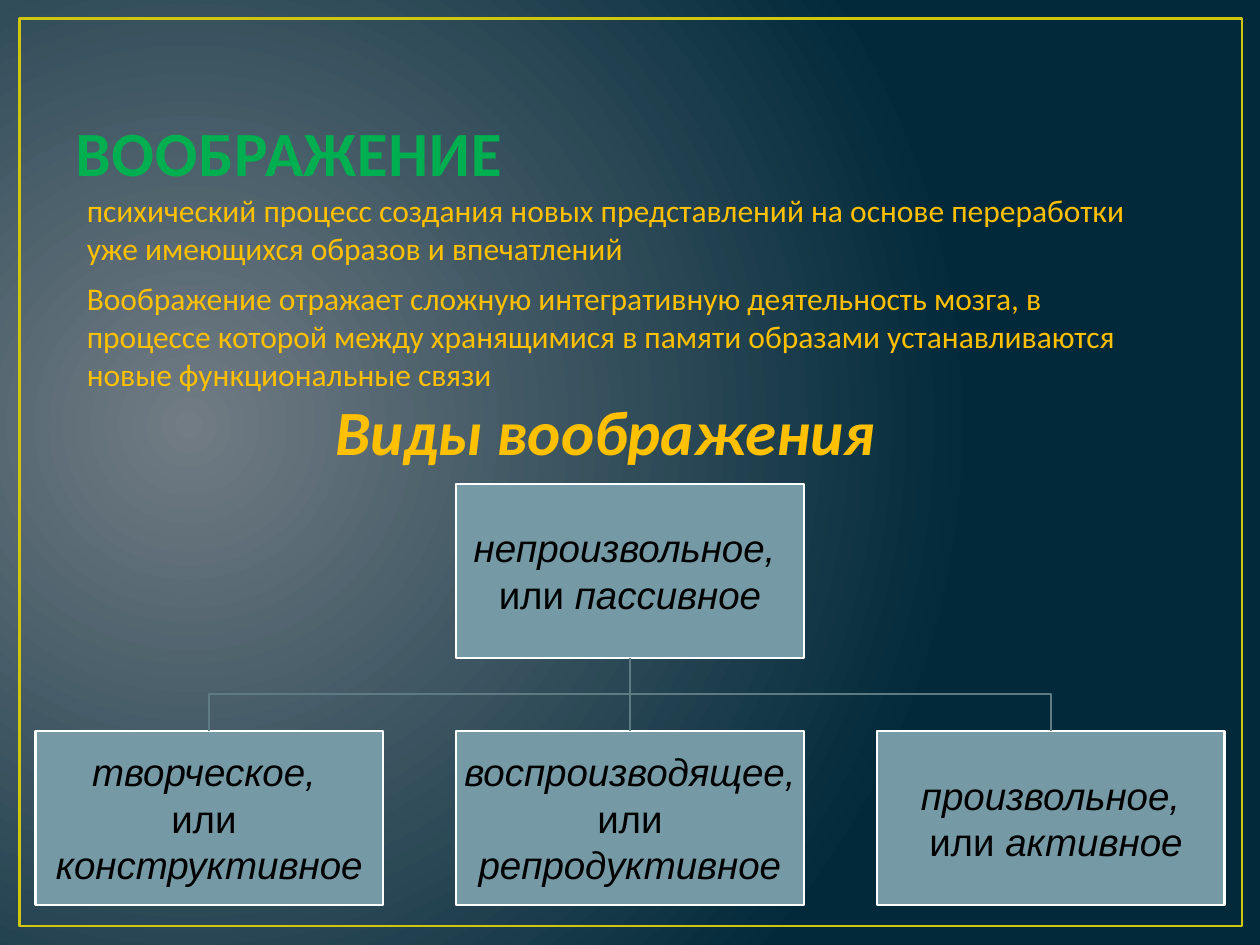
from lxml import etree
from pptx import Presentation
from pptx.dml.color import RGBColor
from pptx.enum import shapes, text
from pptx.oxml.ns import qn
from pptx.util import Cm, Pt

THEME = {
    "glow": "717C84", "night": "01293A", "frame": "CFC60D", "title": "00B050",
    "body": "FFC000", "box": "759AA5", "edge": "FFFFFF", "link": "5E7B84",
    "ink": "000000", "sans": "Calibri", "label": "Arial",
    "big": 36, "small": 18, "mid": 22, "rule": 1.25, "border": 1.5,
}

TITLE = [[("ВООБРАЖЕНИЕ", "b")]]
MEANING = [[("психический процесс создания новых представлений на основе "
             "переработки уже имеющихся образов и впечатлений", "")]]
ROLE = [[("Воображение отражает сложную интегративную деятельность мозга, "
          "в процессе которой между хранящимися в памяти образами "
          "устанавливаются новые функциональные связи", "")]]
KINDS = [[("Виды воображения", "bi")]]
ROOT = [[("непроизвольное, ", "i")], [("или ", ""), ("пассивное", "i")]]
LEAVES = [
    [[("творческое, ", "i")], [("или ", "")], [("конструктивное", "i")]],
    [[("воспроизводящее,", "i")], [(" ", "i"), ("или ", "")],
     [("репродуктивное", "i")]],
    [[("произвольное,", "i")],
     [(" ", "i"), ("или ", ""), ("активное", "i")]],
]

WIDE, HIGH = 25.4, 19.05
BOX_W, BOX_H, GAP = 7.01, 3.51, 1.47
ROOT_Y, LEAF_Y = 9.75, 14.73


def tint(name):
    return RGBColor.from_string(THEME[name])


def write(frame, lines, size, font, color, center=False):
    for n, line in enumerate(lines):
        first = n == 0 and not frame.paragraphs[0].runs
        para = frame.paragraphs[0] if first else frame.add_paragraph()
        para.alignment = (text.PP_ALIGN.CENTER if center
                          else text.PP_ALIGN.LEFT)
        for words, style in line:
            run = para.add_run()
            run.text = words
            run.font.name = THEME[font]
            run.font.size = Pt(THEME[size])
            run.font.color.rgb = tint(color)
            run.font.bold = "b" in style
            run.font.italic = "i" in style


def note(slide, x, y, w, h, anchor=text.MSO_ANCHOR.TOP):
    frame = slide.shapes.add_textbox(Cm(x), Cm(y), Cm(w), Cm(h)).text_frame
    frame.word_wrap = True
    frame.vertical_anchor = anchor
    return frame


def stroke(shape, color, width):
    shape.line.color.rgb = tint(color)
    shape.line.width = Pt(THEME[width])


def block(slide, x, y, lines):
    box = slide.shapes.add_shape(shapes.MSO_SHAPE.RECTANGLE,
                                 Cm(x), Cm(y), Cm(BOX_W), Cm(BOX_H))
    box.shadow.inherit = False
    box.fill.solid()
    box.fill.fore_color.rgb = tint("box")
    stroke(box, "edge", "rule")
    frame = box.text_frame
    frame.word_wrap = True
    frame.vertical_anchor = text.MSO_ANCHOR.MIDDLE
    frame.margin_left = frame.margin_right = Cm(0.05)
    frame.margin_top = frame.margin_bottom = Cm(0.05)
    write(frame, lines, "mid", "label", "ink", True)
    return box


def link(slide, top, leaf):
    x1, y1 = top.left + top.width // 2, top.top + top.height
    x2, y2 = leaf.left + leaf.width // 2, leaf.top
    if x1 == x2:
        line = slide.shapes.add_connector(shapes.MSO_CONNECTOR.STRAIGHT,
                                          x1, y1, x2, y2)
        line.begin_connect(top, 2)
        line.end_connect(leaf, 0)
        etree.SubElement(line._element.spPr, qn("a:effectLst"))
    else:
        mid = (y1 + y2) // 2
        pen = slide.shapes.build_freeform(x1, y1)
        pen.add_line_segments([(x1, mid), (x2, mid), (x2, y2)], close=False)
        line = pen.convert_to_shape()
        line.fill.background()
        line.shadow.inherit = False
    stroke(line, "link", "rule")


def paint(slide):
    fill = slide.background.fill
    fill.gradient()
    for stop, name in zip(fill.gradient_stops, ("glow", "night")):
        stop.color.rgb = tint(name)
    grad = slide._element.find(".//" + qn("a:gradFill"))
    grad.remove(grad.find(qn("a:lin")))
    ring = etree.SubElement(grad, qn("a:path"), {"path": "circle"})
    etree.SubElement(ring, qn("a:fillToRect"),
                     {"l": "15000", "t": "50000", "r": "85000", "b": "60000"})
    edge = slide.shapes.add_shape(shapes.MSO_SHAPE.RECTANGLE,
                                  Cm(0.4), Cm(0.38), Cm(24.64), Cm(18.29))
    edge.shadow.inherit = False
    edge.fill.background()
    stroke(edge, "frame", "border")


def main():
    deck = Presentation()
    deck.slide_width, deck.slide_height = Cm(WIDE), Cm(HIGH)
    slide = deck.slides.add_slide(deck.slide_layouts[6])
    paint(slide)

    head = note(slide, 1.27, 0.76, 22.86, 3.18, text.MSO_ANCHOR.BOTTOM)
    write(head, TITLE, "big", "sans", "title")
    head.paragraphs[0].runs[0]._r.get_or_add_rPr().set("spc", "50")
    write(note(slide, 1.5, 3.73, 21.79, 1.8), MEANING,
          "small", "sans", "body")
    role = note(slide, 1.5, 5.51, 21.41, 4.11)
    write(role, ROLE, "small", "sans", "body")
    write(role, KINDS, "big", "sans", "body", True)

    step = BOX_W + GAP
    left = (WIDE - BOX_W) / 2 - step
    top = block(slide, left + step, ROOT_Y, ROOT)
    for n, lines in enumerate(LEAVES):
        link(slide, top, block(slide, left + n * step, LEAF_Y, lines))
    deck.save("out.pptx")


if __name__ == "__main__":
    main()
